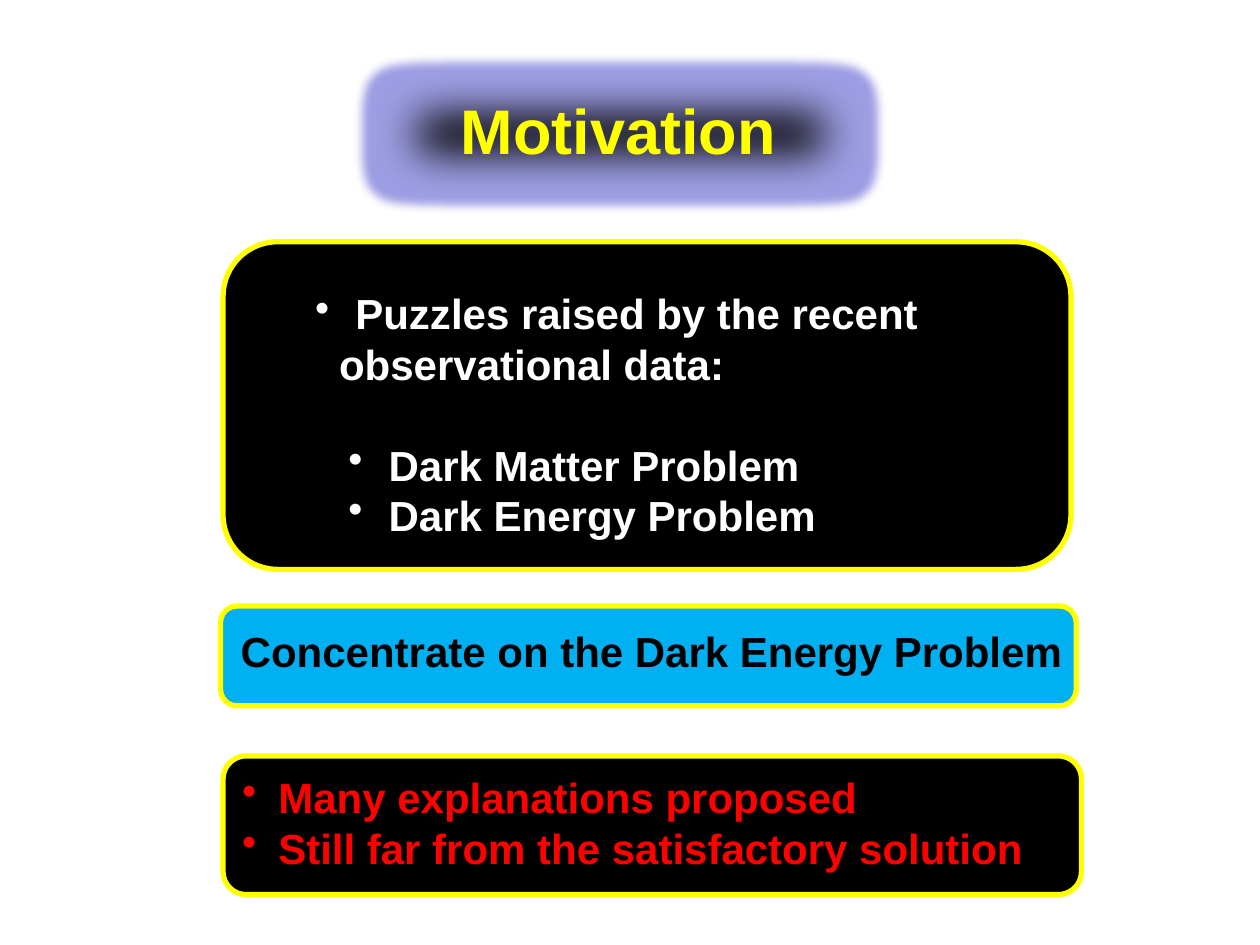
import pptx
import pptx.dml.color
import pptx.enum.shapes
import pptx.enum.text
import pptx.oxml
import pptx.oxml.ns
import pptx.util

Pt = pptx.util.Pt
RGB = pptx.dml.color.RGBColor
ANCHOR = pptx.enum.text.MSO_ANCHOR

BLACK = RGB(0x00, 0x00, 0x00)
WHITE = RGB(0xFF, 0xFF, 0xFF)
YELLOW = RGB(0xFF, 0xFF, 0x00)
RED = RGB(0xFF, 0x00, 0x00)
SKY = RGB(0x00, 0xB0, 0xF0)
INDIGO = RGB(0x0C, 0x0A, 0xBB)


class Board:
    font = "Arial"
    size = 24
    lead = 28.8
    edge = 3

    def __init__(self, slide):
        self.slide = slide

    def panel(self, left, top, width, height, fill):
        kind = pptx.enum.shapes.MSO_SHAPE.ROUNDED_RECTANGLE
        shape = self.slide.shapes.add_shape(
            kind, Pt(left), Pt(top), Pt(width), Pt(height))
        shape.shadow.inherit = False
        shape.fill.solid()
        shape.fill.fore_color.rgb = fill
        shape.line.color.rgb = YELLOW
        shape.line.width = Pt(self.edge)
        return shape

    def label(self, left, top, width, height, wrap=True):
        box = self.slide.shapes.add_textbox(
            Pt(left), Pt(top), Pt(width), Pt(height))
        box.text_frame.word_wrap = wrap
        return box

    def inset(self, shape, left, bottom):
        """Centre the text vertically, with its own left and bottom margins."""
        frame = shape.text_frame
        frame.vertical_anchor = ANCHOR.MIDDLE
        frame.margin_left, frame.margin_bottom = Pt(left), Pt(bottom)

    def para(self, shape, text, color, size=None, left=0, hang=0, before=0):
        """Add a paragraph; a hang above zero gives it a bullet."""
        frame = shape.text_frame
        para = frame.paragraphs[0]
        if para.runs:
            para = frame.add_paragraph()
        para.alignment = pptx.enum.text.PP_ALIGN.LEFT
        para.space_before = Pt(before)
        if size is None:
            para.line_spacing = Pt(self.lead)
        props = para._p.get_or_add_pPr()
        props.set("marL", str(Pt(left + hang)))
        props.set("indent", str(Pt(-hang)))
        if hang:
            mark = pptx.oxml.parse_xml(
                f'<a:buChar {pptx.oxml.ns.nsdecls("a")} char="•"/>')
            props.append(mark)
        run = para.add_run()
        run.text = text
        run.font.name = self.font
        run.font.size = Pt(size or self.size)
        run.font.bold = True
        run.font.color.rgb = color

    def glow(self, shape, color, reach, alpha, soft):
        """Give the shape a coloured glow and soft edges."""
        space = pptx.oxml.ns.nsdecls("a")
        halo = (f'<a:glow {space} rad="{Pt(reach)}"><a:srgbClr val="{color}">'
                f'<a:alpha val="{alpha * 1000}"/></a:srgbClr></a:glow>')
        blur = f'<a:softEdge {space} rad="{Pt(soft)}"/>'
        effects = shape._element.spPr.find(pptx.oxml.ns.qn("a:effectLst"))
        for part in (halo, blur):
            effects.append(pptx.oxml.parse_xml(part))


def main():
    deck = pptx.Presentation()
    deck.slide_width, deck.slide_height = Pt(720), Pt(540)
    board = Board(deck.slides.add_slide(deck.slide_layouts[6]))

    board.panel(126, 346.3, 489, 57, SKY)
    board.panel(127.5, 138.2, 484.5, 187.2, BLACK)

    puzzle = board.label(173, 161, 361, 153)
    board.para(puzzle, "Puzzles raised by the recent", WHITE, hang=23)
    board.para(puzzle, "observational data:", WHITE, left=13.7)
    for name, gap in (("Matter", board.lead), ("Energy", 0)):
        board.para(puzzle, f"Dark {name} Problem", WHITE,
                   left=19, hang=23, before=gap)

    title = board.panel(213, 41.8, 282.2, 69, BLACK)
    board.inset(title, 47, 8.2)
    board.para(title, "Motivation", YELLOW, size=36)
    board.glow(title, INDIGO, reach=11, alpha=40, soft=25)

    focus = board.label(130.5, 354, 488, 36, wrap=False)
    board.para(focus, "Concentrate on the Dark Energy Problem", BLACK)

    status = board.panel(127.5, 432, 490.5, 79.2, BLACK)
    board.inset(status, 7.2, 7)
    for line in ("Many explanations proposed",
                 "Still far from the satisfactory solution"):
        board.para(status, line, RED, hang=20.6)

    deck.save("out.pptx")


if __name__ == "__main__":
    main()
